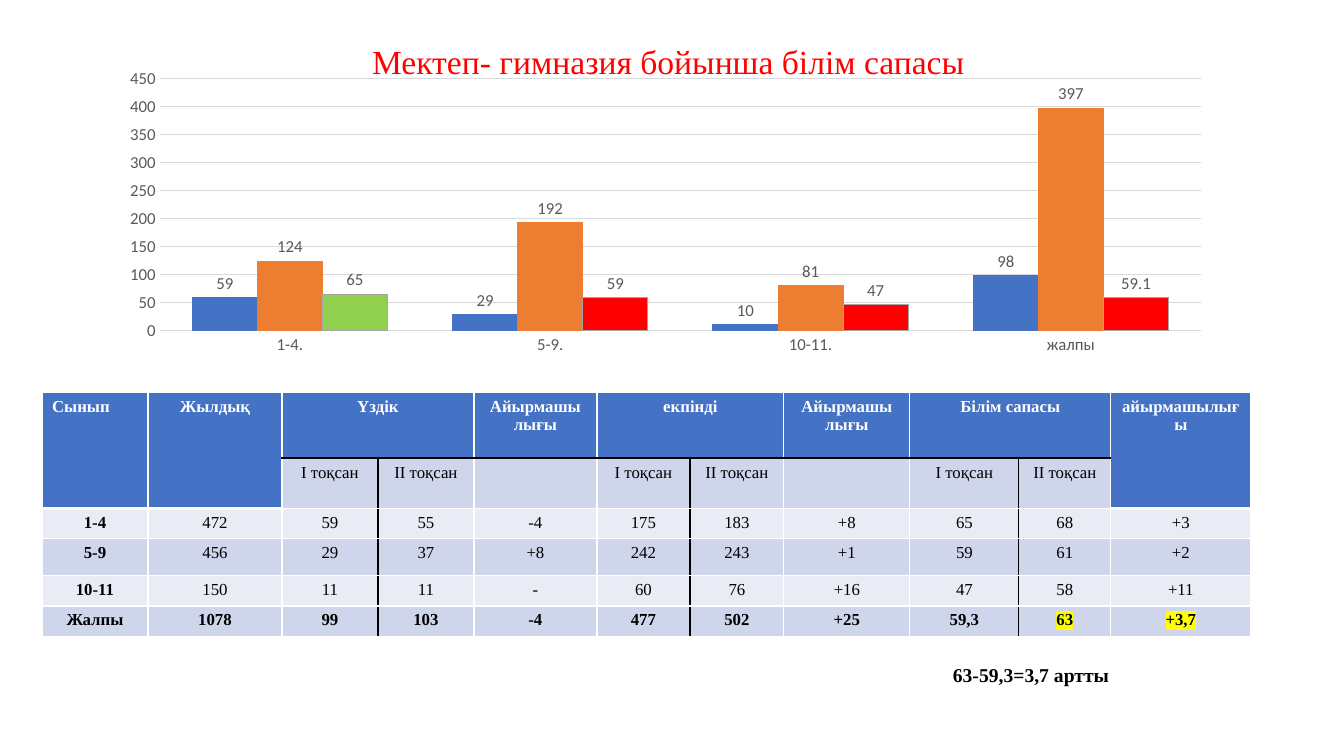
from lxml.etree import SubElement
from pptx import Presentation
from pptx.chart.data import CategoryChartData
from pptx.dml.color import RGBColor
from pptx.enum.chart import XL_CHART_TYPE as ChartType, XL_LABEL_POSITION as LabelPos
from pptx.enum.chart import XL_TICK_MARK as TickMark
from pptx.enum.text import MSO_ANCHOR as Anchor, PP_ALIGN as Align
from pptx.oxml.ns import qn
from pptx.util import Pt

PX = 9144000 / 1008  # EMU in one px
SERIF, SANS = "Times New Roman", "Calibri"

WHITE = RGBColor(0xFF, 0xFF, 0xFF)
BLACK = RGBColor(0, 0, 0)
RED = RGBColor(0xFF, 0, 0)
GREEN = RGBColor(0x92, 0xD0, 0x50)
YELLOW = RGBColor(0xFF, 0xFF, 0)
BLUE = RGBColor(0x44, 0x72, 0xC4)
ORANGE = RGBColor(0xED, 0x7D, 0x31)
SILVER = RGBColor(0xA5, 0xA5, 0xA5)
LABEL_GREY = RGBColor(0x59, 0x59, 0x59)
GRID_GREY = RGBColor(0xD9, 0xD9, 0xD9)
BAND_DARK = RGBColor(0xCF, 0xD5, 0xEA)
BAND_LIGHT = RGBColor(0xE9, 0xEB, 0xF5)

# Quality of learning by grade
GRADES = ["1-4.", "5-9.", "10-11.", "жалпы"]
SERIES = [  # name, values, fill, outline
    ("Series 1", (59, 29, 10, 98), BLUE, BLUE),
    ("Series 2", (124, 192, 81, 397), ORANGE, ORANGE),
    ("Series 3", (65, 59, 47, 59.1), RED, SILVER),
]

COLUMN_WIDTHS = [106, 134, 96, 96, 123, 93, 94, 126, 109, 92, 140]
ROW_HEIGHTS = [66, 47, 30, 37, 30, 30]
PAIR_STARTS = (2, 5, 8)    # first column of each two-quarter pair
TALL_HEADS = (0, 1, 10)    # headings two rows high
QUARTERS = ["І тоқсан", "ІІ тоқсан"]
ROWS = [
    ["Сынып", "Жылдық", "Үздік", "", "Айырмашы\nлығы", "екпінді", "",
     "Айырмашы\nлығы", "Білім сапасы", "", "айырмашылығы"],
    ["", "", *QUARTERS, "", *QUARTERS, "", *QUARTERS, ""],
    ["1-4", "472", "59", "55", "-4", "175", "183", "+8", "65", "68", "+3"],
    ["5-9", "456", "29", "37", "+8", "242", "243", "+1", "59", "61", "+2"],
    ["10-11", "150", "11", "11", "-", "60", "76", "+16", "47", "58", "+11"],
    ["Жалпы", "1078", "99", "103", "-4", "477", "502", "+25", "59,3", "63", "+3,7"],
]


def px(*lengths):
    return [round(length * PX) for length in lengths]


def write(frame, text, *, size, color=BLACK, bold=False, align=Align.LEFT,
          spacing=None, highlight=None):
    for index, line in enumerate(text.split("\n")):
        paragraph = frame.add_paragraph() if index else frame.paragraphs[0]
        paragraph.alignment = align
        paragraph.line_spacing = spacing
        run = paragraph.add_run()
        run.text = line
        font = run.font
        font.name, font.size, font.bold = SERIF, Pt(size), bold
        font.color.rgb = color
        if highlight is not None:
            properties = font._element
            mark = SubElement(properties, qn("a:highlight"))
            SubElement(mark, qn("a:srgbClr"), val=str(highlight))
            properties.find(qn("a:solidFill")).addnext(mark)


def add_caption(slide, box, text, **style):
    frame = slide.shapes.add_textbox(*px(*box)).text_frame
    frame.word_wrap = True
    frame.vertical_anchor = Anchor.MIDDLE
    write(frame, text, spacing=0.9, **style)


def set_borders(cell, row, column):
    colors = dict.fromkeys("LRTB", WHITE)
    widths = dict.fromkeys("LRTB", 1)
    if row < 2 and column in TALL_HEADS:
        widths["B"] = 3
    elif row < 2:
        colors["T" if row else "B"] = BLACK
    if row and column in PAIR_STARTS:
        colors["R"] = BLACK
    if row and column - 1 in PAIR_STARTS:
        colors["L"] = BLACK
    properties = cell._tc.get_or_add_tcPr()
    for side, color in colors.items():
        line = SubElement(properties, qn(f"a:ln{side}"), w=str(Pt(widths[side])))
        fill = SubElement(line, qn("a:solidFill"))
        SubElement(fill, qn("a:srgbClr"), val=str(color))


def add_results_table(slide, left, top):
    size = sum(COLUMN_WIDTHS), sum(ROW_HEIGHTS)
    table = slide.shapes.add_table(len(ROWS), len(COLUMN_WIDTHS),
                                   *px(left, top, *size)).table
    table.first_row = table.horz_banding = False
    for column, width in zip(table.columns, px(*COLUMN_WIDTHS)):
        column.width = width
    for row, height in zip(table.rows, px(*ROW_HEIGHTS)):
        row.height = height

    # Cells
    last_row, last_column = len(ROWS) - 1, len(COLUMN_WIDTHS) - 1
    for r, texts in enumerate(ROWS):
        for c, text in enumerate(texts):
            cell = table.cell(r, c)
            set_borders(cell, r, c)
            heading = r == 0 or (r == 1 and c in TALL_HEADS)
            cell.fill.solid()
            cell.fill.fore_color.rgb = (
                BLUE if heading else BAND_DARK if r % 2 else BAND_LIGHT)
            if text:
                total = r == last_row
                write(cell.text_frame, text, size=12,
                      color=WHITE if heading else BLACK,
                      bold=heading or c == 0 or total,
                      align=Align.LEFT if r == c == 0 else Align.CENTER,
                      highlight=YELLOW if total and c >= last_column - 1 else None)

    # Merged headings
    for c in TALL_HEADS:
        table.cell(0, c).merge(table.cell(1, c))
    for c in PAIR_STARTS:
        table.cell(0, c).merge(table.cell(0, c + 1))


def style_labels(font):
    font.name, font.size = SANS, Pt(12)
    font.color.rgb = LABEL_GREY


def style_line(line, color):
    line.color.rgb = color
    line.width = Pt(0.75)


def add_quality_chart(slide, box):
    data = CategoryChartData()
    data.categories = GRADES
    for name, values, _, _ in SERIES:
        data.add_series(name, values)
    chart = slide.shapes.add_chart(ChartType.COLUMN_CLUSTERED, *px(*box), data).chart
    chart.has_legend = chart.has_title = False
    chart.font.name, chart.font.size = SANS, Pt(10)
    chart.font.color.rgb = BLACK

    # Axes
    grades, pupils = chart.category_axis, chart.value_axis
    for axis in (grades, pupils):
        axis.major_tick_mark = axis.minor_tick_mark = TickMark.NONE
        style_labels(axis.tick_labels.font)
    style_line(grades.format.line, GRID_GREY)
    pupils.format.line.fill.background()
    style_line(pupils.major_gridlines.format.line, GRID_GREY)
    pupils.minimum_scale, pupils.maximum_scale, pupils.major_unit = 0, 450, 50

    # Columns
    plot = chart.plots[0]
    plot.gap_width, plot.overlap, plot.vary_by_categories = 100, 0, False
    for series, (_, _, color, outline) in zip(plot.series, SERIES):
        series.format.fill.solid()
        series.format.fill.fore_color.rgb = color
        style_line(series.format.line, outline)
        labels = series.data_labels
        labels.show_value = True
        labels.position = LabelPos.OUTSIDE_END
        style_labels(labels.font)
    primary = plot.series[2].points[0].format
    primary.fill.solid()
    primary.fill.fore_color.rgb = GREEN
    style_line(primary.line, SILVER)

    # Clear background and inner plot position
    space = chart._chartSpace
    background = SubElement(space, qn("c:spPr"))
    SubElement(background, qn("a:noFill"))
    SubElement(SubElement(background, qn("a:ln")), qn("a:noFill"))
    space.chart.addnext(background)
    area = space.chart.plotArea
    for old_layout in area.findall(qn("c:layout")):
        area.remove(old_layout)
    layout = SubElement(area, qn("c:layout"))
    area.insert(0, layout)
    manual = SubElement(layout, qn("c:manualLayout"))
    for tag, value in (("layoutTarget", "inner"), ("xMode", "edge"), ("yMode", "edge"),
                       ("x", "0.084"), ("y", "0.121"), ("w", "0.86"), ("h", "0.793")):
        SubElement(manual, qn(f"c:{tag}"), val=value)


def main():
    deck = Presentation()
    deck.slide_width, deck.slide_height = px(1344, 756)
    slide = deck.slides.add_slide(deck.slide_layouts[6])
    add_caption(slide, (93, 40, 1159, 48), "Мектеп- гимназия бойынша білім сапасы ",
                size=24, color=RED, align=Align.CENTER)
    add_results_table(slide, 42, 392)
    add_quality_chart(slide, (58, 40, 1211, 318))
    add_caption(slide, (943, 634, 287, 84), "63-59,3=3,7 артты", size=14, bold=True)
    deck.save("out.pptx")


if __name__ == "__main__":
    main()
